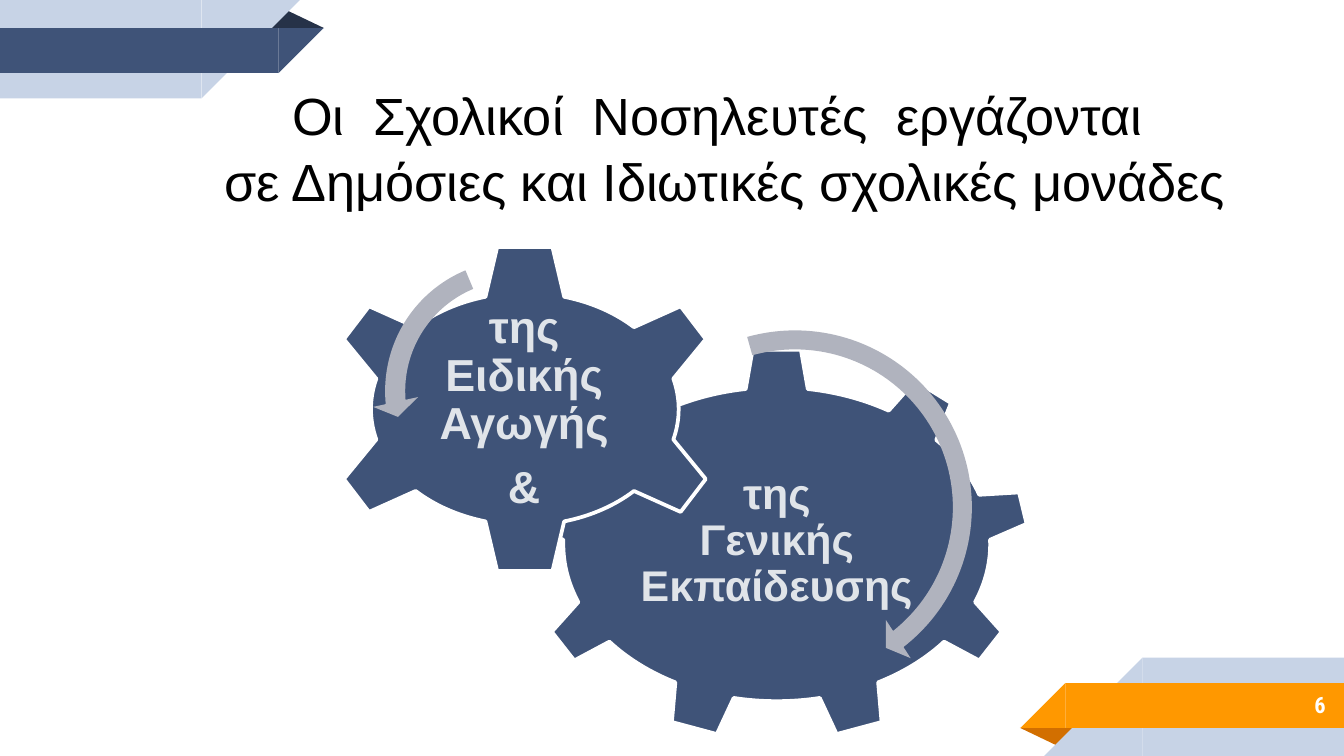
from dataclasses import dataclass
from typing import Optional

from pptx import Presentation
from pptx.dml.color import RGBColor as Rgb
from pptx.enum.shapes import MSO_SHAPE as Preset
from pptx.enum.text import MSO_ANCHOR as Anchor, PP_ALIGN as Align
from pptx.util import Pt

SLIDE_W, SLIDE_H = 720, 405


@dataclass(frozen=True)
class Theme:
    navy: str = "3F5378"
    dark_navy: str = "263248"
    pale: str = "C7D3E6"
    orange: str = "FF9800"
    dark_orange: str = "D26F00"
    arrow: str = "B0B3BE"
    gear_text: str = "E0E4E9"
    white: str = "FFFFFF"
    black: str = "000000"
    font: str = "Arial"
    number_font: str = "Roboto Condensed"
    title_size: int = 28
    number_size: int = 12


THEME = Theme()


@dataclass(frozen=True)
class Box:
    left: float
    top: float
    width: float
    height: float

    def lengths(self) -> tuple:
        return Pt(self.left), Pt(self.top), Pt(self.width), Pt(self.height)

    def turned(self) -> "Box":
        """The box after half a turn about the slide centre."""
        return Box(SLIDE_W - self.left - self.width,
                   SLIDE_H - self.top - self.height, self.width, self.height)


@dataclass(frozen=True)
class Gear:
    preset: Preset
    box: Box
    label_box: Box
    label: tuple[str, ...]
    size: int
    gaps: tuple[int, ...]


@dataclass(frozen=True)
class TurnArrow:
    preset: Preset
    box: Box
    adjustments: tuple[float, ...]


GEARS = (
    Gear(Preset.GEAR_9, Box(280.8, 186.5, 270.7, 210.2), Box(330.5, 236.2, 171.4, 108),
         ("της", "Γενικής Εκπαίδευσης"), 23, (0, 8)),
    Gear(Preset.GEAR_6, Box(172.1, 130.3, 218.2, 177.8), Box(222.5, 175, 116.6, 87.8),
         ("της Ειδικής Αγωγής", "&"), 24, (8, 8)),
)
TURN_ARROWS = (
    TurnArrow(Preset.CIRCULAR_ARROW, Box(324, 169.9, 203.8, 203.8),
              (0.05, 3.13, 31.14, 152.6, 0.06)),
    TurnArrow(Preset.LEFT_CIRCULAR_ARROW, Box(199.4, 132.5, 154.1, 154.1),
              (0.07, 4.3, 104.89, 148.38, 0.08)),
)


def add_figure(slide, preset: Preset, box: Box, fill: str, *, rotation: float = 0,
               outline: Optional[str] = None, adjustments: tuple[float, ...] = ()) -> None:
    figure = slide.shapes.add_shape(preset, *box.lengths())
    figure.shadow.inherit = False
    figure.rotation = rotation
    figure.fill.solid()
    figure.fill.fore_color.rgb = Rgb.from_string(fill)
    if outline:
        figure.line.color.rgb = Rgb.from_string(outline)
        figure.line.width = Pt(2)
    else:
        figure.line.fill.background()
    for index, value in enumerate(adjustments):
        figure.adjustments[index] = value


def write(frame, *lines: str, size: int, color: str, font: str = THEME.font,
          bold: bool = False, align: Align = Align.CENTER, anchor: Anchor = Anchor.MIDDLE,
          inset: float = 2, spacing: float = 1, gaps: tuple[int, ...] = ()) -> None:
    frame.word_wrap = True
    frame.vertical_anchor = anchor
    frame.margin_left = frame.margin_right = Pt(inset)
    frame.margin_top = frame.margin_bottom = Pt(inset)
    frame.text = "\n".join(lines)
    for index, paragraph in enumerate(frame.paragraphs):
        paragraph.alignment = align
        paragraph.line_spacing = spacing
        paragraph.space_before = Pt(0)
        paragraph.space_after = Pt(gaps[index] if gaps else 0)
        for run in paragraph.runs:
            run.font.size = Pt(size)
            run.font.name = font
            run.font.bold = bold
            run.font.color.rgb = Rgb.from_string(color)


def add_label(slide, box: Box, *lines: str, **text_format) -> None:
    write(slide.shapes.add_textbox(*box.lengths()).text_frame, *lines, **text_format)


def add_ribbon(slide, stripe: str, fold: str, *, turned: bool = False) -> None:
    """Folded corner ribbon at top left, or turned into the bottom right corner."""
    half_turn = 180 if turned else 0
    parts = (
        (Preset.ISOSCELES_TRIANGLE, Box(142.6, 5, 31, 10.1), fold, 0, (0.32,)),
        (Preset.RECTANGLE, Box(0, 0, 108, 52.7), THEME.pale, 0, ()),
        (Preset.RIGHT_TRIANGLE, Box(108, 0, 52.7, 52.7), THEME.pale, 90, ()),
        (Preset.RECTANGLE, Box(0, 15.1, 149.3, 24), stripe, 0, ()),
        (Preset.RIGHT_TRIANGLE, Box(149.3, 15.1, 24, 24), stripe, 90, ()),
    )
    for preset, box, fill, rotation, adjustments in parts:
        add_figure(slide, preset, box.turned() if turned else box, fill,
                   rotation=rotation + half_turn, adjustments=adjustments)


def add_gear(slide, gear: Gear) -> None:
    add_figure(slide, gear.preset, gear.box, THEME.navy, outline=THEME.white)
    add_label(slide, gear.label_box, *gear.label, size=gear.size, color=THEME.gear_text,
              bold=True, spacing=0.9, gaps=gear.gaps)


def main() -> None:
    deck = Presentation()
    deck.slide_width, deck.slide_height = Pt(SLIDE_W), Pt(SLIDE_H)
    slide = deck.slides.add_slide(deck.slide_layouts[5])

    add_ribbon(slide, THEME.navy, THEME.dark_navy)
    add_ribbon(slide, THEME.orange, THEME.dark_orange, turned=True)
    add_label(slide, Box(599.8, 365, 117.4, 25.2), "6", size=THEME.number_size,
              color=THEME.white, font=THEME.number_font, bold=True,
              align=Align.RIGHT, inset=7.2)

    title = slide.shapes.title
    title.left, title.top, title.width, title.height = Box(77.8, 38.9, 620.6, 104.4).lengths()
    write(title.text_frame,
          "Οι  Σχολικοί  Νοσηλευτές  εργάζονται \vσε Δημόσιες και Ιδιωτικές σχολικές μονάδες",
          size=THEME.title_size, color=THEME.black, anchor=Anchor.TOP,
          inset=4, spacing=1.05)

    for gear in GEARS:
        add_gear(slide, gear)
    for arrow in TURN_ARROWS:
        add_figure(slide, arrow.preset, arrow.box, THEME.arrow,
                   adjustments=arrow.adjustments)
    deck.save("out.pptx")


if __name__ == "__main__":
    main()
